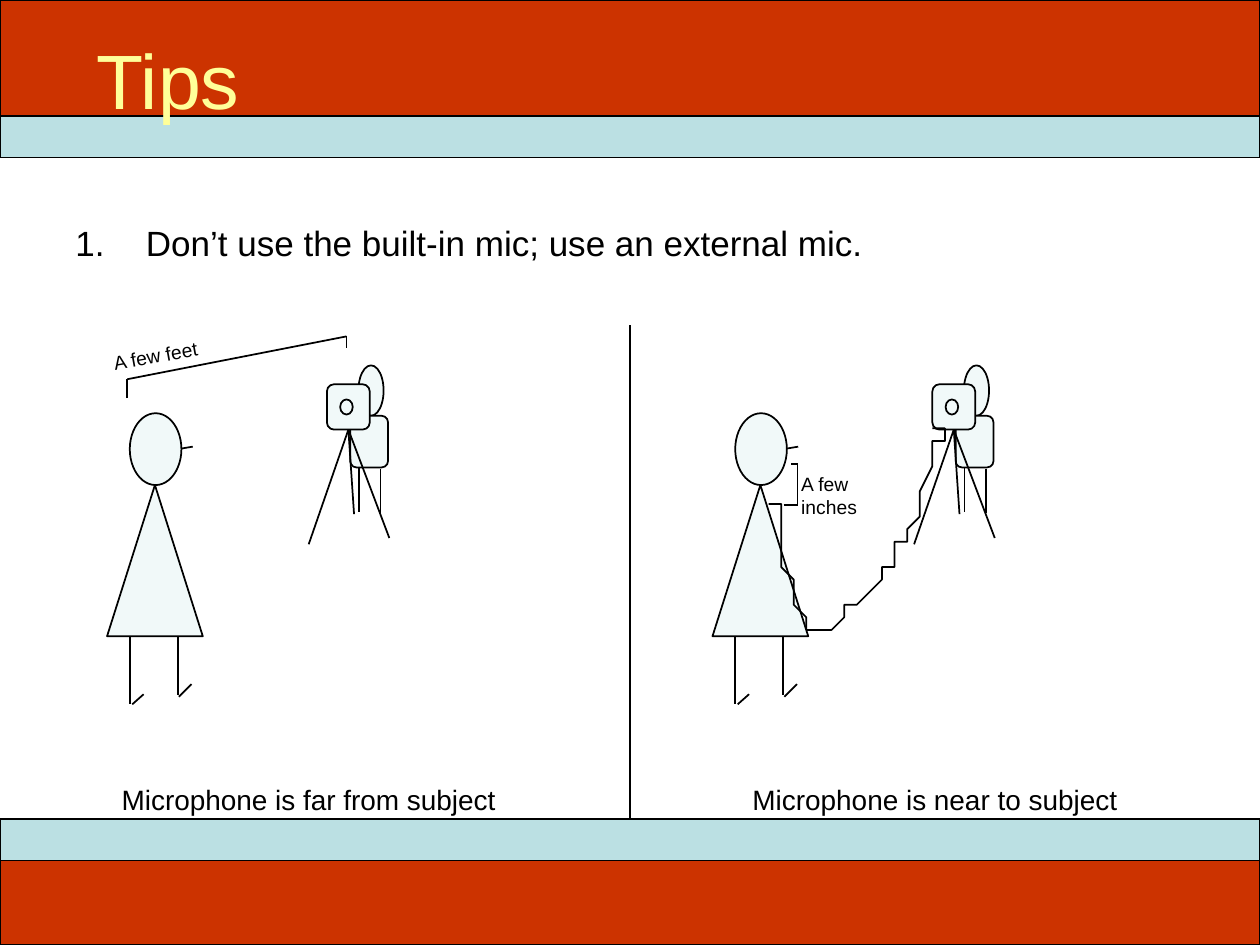
import pptx
import pptx.dml.color
import pptx.enum.shapes
import pptx.enum.text
import pptx.oxml
import pptx.oxml.ns
import pptx.util

RED = pptx.dml.color.RGBColor(0xCC, 0x33, 0x00)
BLUE = pptx.dml.color.RGBColor(0xBB, 0xE0, 0xE3)
PALE = pptx.dml.color.RGBColor(0xF1, 0xF9, 0xF9)
YELLOW = pptx.dml.color.RGBColor(0xFF, 0xFF, 0x99)
BLACK = pptx.dml.color.RGBColor(0x00, 0x00, 0x00)

COLUMNS, ROWS = 100, 75
CELL = pptx.util.Inches(10) // COLUMNS
PANEL_SHIFT = 48.05
PRESET = pptx.enum.shapes.MSO_SHAPE
MIDDLE = pptx.enum.text.MSO_ANCHOR.MIDDLE
CENTER = pptx.enum.text.PP_ALIGN.CENTER

FIGURE_LINES = [
    (14.4, 35.6, 15.3, 35.45),
    (14.1, 50.55, 14.1, 55.2),
    (10.3, 50.5, 10.3, 55.9),
    (10.5, 55.9, 11.4, 55.1),
    (14.2, 55.3, 15.2, 54.3),
    (28.5, 37.1, 28.5, 40.6),
    (30.2, 37.2, 30.2, 40.7),
]
TRIPOD_FEET = [(24.5, 43.2), (28.1, 40.8), (30.9, 42.7)]
FAR_BRACKET = [(10.1, 31.6), (10.1, 30.1), (27.5, 26.7), (27.5, 27.6)]
NEAR_BRACKET = [(62.2, 40.1), (63.3, 40.1), (63.3, 36.8), (62.8, 36.8)]
CABLE = [
    (74.5, 34.2), (74.6, 34.4), (74.8, 34.6), (74.6, 34.7), (74.5, 35.1),
    (74, 36), (73.6, 37.4), (73.1, 39.2), (72.9, 40.2), (72.6, 40.9),
    (72.3, 41.6), (72, 42.3), (71.7, 42.5), (71.6, 42.8), (71.2, 43),
    (71.1, 43.5), (70.8, 44.5), (70.6, 44.9), (70.5, 45.2), (70.1, 45.8),
    (69.5, 46.5), (69.3, 46.8), (69.2, 47.1), (68.9, 47.3), (68.2, 47.9),
    (67.9, 48.2), (67.4, 48.5), (67.1, 48.9), (66.8, 49.3), (66.4, 49.6),
    (65.8, 49.8), (64.2, 49.6), (63.9, 49.4), (63.7, 49.1), (63.5, 48.8),
    (63.3, 48), (63.1, 47.7), (62.9, 47.1), (62.7, 46.5), (62.6, 46),
    (62.4, 45.4), (62.2, 44.6), (61.8, 43.3), (61.7, 42.9), (61.6, 41.6),
    (61.5, 40.4), (61.3, 40.2), (61, 40.2),
]
MICROPHONE = [(61, 40.2), (61.3, 40.15), (61.4, 40), (61.35, 39.8), (61.2, 39.9)]


def cells(*counts):
    """Return grid counts as lengths."""
    return [pptx.util.Emu(round(count * CELL)) for count in counts]


def style_line(line, width=1.0):
    """Draw a line in black at the given width."""
    line.color.rgb = BLACK
    line.width = pptx.util.Pt(width)


def add_part(shapes, preset, box, fill=PALE, width=1.0):
    """Add an outlined preset shape."""
    shape = shapes.add_shape(preset, *cells(*box))
    shape.shadow.inherit = False
    shape.fill.solid()
    shape.fill.fore_color.rgb = fill
    style_line(shape.line, width)
    return shape


def add_line(shapes, ends, start=None, finish=None):
    """Add a straight line, joined to (shape, site) pairs where given."""
    straight = pptx.enum.shapes.MSO_CONNECTOR.STRAIGHT
    connector = shapes.add_connector(straight, *cells(*ends))
    style_line(connector.line)
    pptx.oxml.ns.qn("a:effectLst")
    properties = connector.element.spPr
    properties.append(properties.makeelement(pptx.oxml.ns.qn("a:effectLst"), {}))
    if start:
        connector.begin_connect(*start)
    if finish:
        connector.end_connect(*finish)


def add_bracket(shapes, points):
    """Add lines through successive points."""
    for first, second in zip(points, points[1:]):
        add_line(shapes, first + second)


def add_outline(shapes, points, close):
    """Add an unfilled freeform through the points."""
    builder = shapes.build_freeform(*points[0], scale=CELL)
    builder.add_line_segments(points[1:], close=close)
    shape = builder.convert_to_shape()
    shape.shadow.inherit = False
    shape.fill.background()
    style_line(shape.line)


def add_text(shapes, box, text, size, color=BLACK, align=None, anchor=None):
    """Add a wrapping text box and return it."""
    shape = shapes.add_textbox(*cells(*box))
    frame = shape.text_frame
    frame.word_wrap = True
    frame.vertical_anchor = anchor
    paragraph = frame.paragraphs[0]
    paragraph.alignment = align
    run = paragraph.add_run()
    run.text = text
    run.font.name = "Arial"
    run.font.size = pptx.util.Pt(size)
    run.font.color.rgb = color
    return shape


def number_paragraph(paragraph, indent):
    """Give a paragraph an automatic number and a hanging indent."""
    properties = paragraph._p.get_or_add_pPr()
    properties.set("marL", str(indent))
    properties.set("indent", str(-indent))
    bullet = properties.makeelement(
        pptx.oxml.ns.qn("a:buAutoNum"), {"type": "arabicPeriod"}
    )
    properties.append(bullet)


def add_scene(shapes, shift):
    """Add a person facing a camera, moved right by shift columns."""
    group = shapes.add_group_shape().shapes

    def part(preset, left, *rest):
        """Add a shifted shape of the scene."""
        return add_part(group, preset, (left + shift, *rest))

    part(PRESET.OVAL, 28.45, 29, 2, 4)
    part(PRESET.ROUNDED_RECTANGLE, 27.8, 33, 3, 4.1)
    part(PRESET.OVAL, 10.3, 32.8, 4.1, 5.7)
    part(PRESET.ISOSCELES_TRIANGLE, 8.5, 38.5, 7.6, 12)
    lens_box = part(PRESET.ROUNDED_RECTANGLE, 25.95, 30.5, 3.4, 3.6)
    part(PRESET.OVAL, 27, 31.7, 1, 1.2)
    for left, top, right, bottom in FIGURE_LINES:
        add_line(group, (left + shift, top, right + shift, bottom))
    for foot, floor in TRIPOD_FEET:
        add_line(group, (27.7 + shift, 34.1, foot + shift, floor), (lens_box, 2))


def main():
    """Build the slide and save it."""
    presentation = pptx.Presentation()
    presentation.slide_width, presentation.slide_height = cells(COLUMNS, ROWS)
    slide = presentation.slides.add_slide(presentation.slide_layouts[6])
    shapes = slide.shapes

    tip = add_text(
        shapes, (5, 17.5, 90, 8),
        "Don’t use the built-in mic; use an external mic.", 20,
    )
    paragraph = tip.text_frame.paragraphs[0]
    paragraph.line_spacing = 0.9
    paragraph.space_before = pptx.util.Pt(4)
    number_paragraph(paragraph, cells(5.6)[0])

    add_part(shapes, PRESET.RECTANGLE, (0, 0, COLUMNS, 9.2), RED, 0.75)
    add_part(shapes, PRESET.RECTANGLE, (0, 68.3, COLUMNS, 6.7), RED, 0.75)
    footer = add_part(shapes, PRESET.RECTANGLE, (0, 65, COLUMNS, 3.3), BLUE, 0.75)
    add_part(shapes, PRESET.RECTANGLE, (0, 9.2, COLUMNS, 3.3), BLUE, 0.75)
    add_text(shapes, (6.7, 0, 90, 12.5), "Tips", 44, YELLOW, anchor=MIDDLE)

    for shift in (0, PANEL_SHIFT):
        add_scene(shapes, shift)
    add_outline(shapes, CABLE, False)
    add_outline(shapes, MICROPHONE, True)

    for left, distance in ((2.7, "far from"), (52.4, "near to")):
        caption = f"Microphone is {distance} subject"
        add_text(shapes, (left, 61.6, 43.6, 3.7), caption, 16, align=CENTER)

    far = shapes.add_group_shape().shapes
    add_bracket(far, FAR_BRACKET)
    add_text(far, (7.9, 25.6, 22, 2.9), "A few feet", 11).rotation = 349.7
    near = shapes.add_group_shape().shapes
    add_bracket(near, NEAR_BRACKET)
    add_text(near, (62.6, 37, 10.1, 2.8), "A few inches", 11)
    add_line(shapes, (50, 25.8, 50, 65), finish=(footer, 0))
    presentation.save("out.pptx")


if __name__ == "__main__":
    main()
